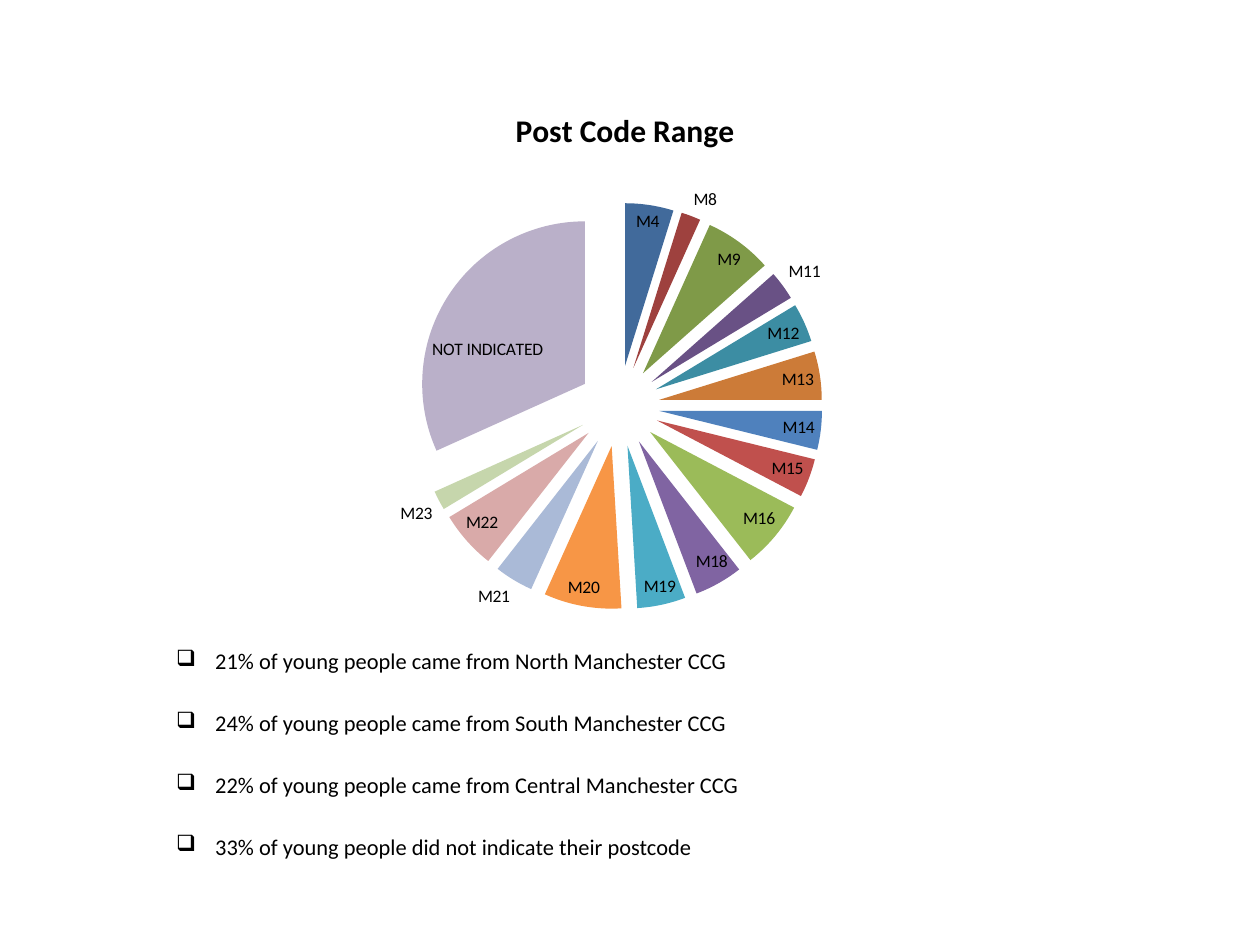
"""Build a slide with a post code pie chart and four findings."""
from lxml.etree import SubElement
from pptx import Presentation
from pptx.chart.data import CategoryChartData
from pptx.dml.color import RGBColor
from pptx.enum.chart import XL_CHART_TYPE, XL_LABEL_POSITION
from pptx.oxml.ns import qn
from pptx.util import Inches, Pt

BLACK = RGBColor(0x00, 0x00, 0x00)
DARK_BLUE = RGBColor(0x41, 0x6A, 0x9B)
DARK_RED = RGBColor(0x9E, 0x41, 0x3E)
DARK_GREEN = RGBColor(0x7F, 0x9A, 0x48)
DARK_PURPLE = RGBColor(0x69, 0x51, 0x85)
DARK_TEAL = RGBColor(0x3C, 0x8D, 0xA3)
DARK_ORANGE = RGBColor(0xCC, 0x7B, 0x38)
BLUE = RGBColor(0x4F, 0x81, 0xBD)
RED = RGBColor(0xC0, 0x50, 0x4D)
GREEN = RGBColor(0x9B, 0xBB, 0x59)
PURPLE = RGBColor(0x80, 0x64, 0xA2)
TEAL = RGBColor(0x4B, 0xAC, 0xC6)
ORANGE = RGBColor(0xF7, 0x96, 0x46)
LIGHT_BLUE = RGBColor(0xAA, 0xBA, 0xD7)
LIGHT_RED = RGBColor(0xD9, 0xAA, 0xA9)
LIGHT_GREEN = RGBColor(0xC6, 0xD6, 0xAC)
LIGHT_PURPLE = RGBColor(0xBA, 0xB0, 0xC9)

FONT = "Calibri"
TITLE = "Post Code Range"
POST_CODES = [
    ("M4", 5, DARK_BLUE), ("M8", 2, DARK_RED), ("M9", 7, DARK_GREEN),
    ("M11", 3, DARK_PURPLE), ("M12", 4, DARK_TEAL), ("M13", 5, DARK_ORANGE),
    ("M14", 4, BLUE), ("M15", 4, RED), ("M16", 7, GREEN),
    ("M18", 5, PURPLE), ("M19", 5, TEAL), ("M20", 8, ORANGE),
    ("M21", 4, LIGHT_BLUE), ("M22", 6, LIGHT_RED), ("M23", 2, LIGHT_GREEN),
    ("NOT INDICATED", 33, LIGHT_PURPLE),
]
FINDINGS = [
    "21% of young people came from North Manchester CCG",
    "24% of young people came from South Manchester CCG",
    "22% of young people came from Central Manchester CCG",
    "33% of young people did not indicate their postcode",
]


def write(para, text, size, bold=False, bullet=None, indent=0.31, gap=0):
    """Put formatted text in a paragraph, with an optional hanging bullet."""
    span = para.add_run()
    span.text = text
    span.font.name, span.font.size, span.font.bold = FONT, Pt(size), bold
    span.font.color.rgb = BLACK
    if gap:
        para.space_after = Pt(gap)
    if bullet:
        properties = para._p.get_or_add_pPr()
        properties.set("marL", str(Inches(indent)))
        properties.set("indent", str(-Inches(indent)))
        SubElement(properties, qn("a:buChar")).set("char", bullet)


def add_pie(slide):
    """Add the exploded pie of post codes."""
    data = CategoryChartData()
    data.categories = [name for name, _, _ in POST_CODES]
    data.add_series("Series 1", [value for _, value, _ in POST_CODES])
    chart = slide.shapes.add_chart(
        XL_CHART_TYPE.PIE, Inches(1.96), Inches(0.67), Inches(6), Inches(4.5), data
    ).chart
    chart.font.name, chart.font.size = FONT, Pt(10)
    chart.font.color.rgb = BLACK
    chart.has_legend = False
    chart.has_title = True
    write(chart.chart_title.text_frame.paragraphs[0], TITLE, 18, bold=True)

    plot = chart.plots[0]
    plot.vary_by_categories = True
    series = plot.series[0]
    for index, (_, _, color) in enumerate(POST_CODES):
        fill = series.points[index].format.fill
        fill.solid()
        fill.fore_color.rgb = color
    labels = series.data_labels
    labels.show_category_name = True
    labels.show_value = False
    labels.show_percentage = False
    labels.position = XL_LABEL_POSITION.BEST_FIT
    explosion = SubElement(series._element, qn("c:explosion"))
    explosion.set("val", "25")
    series._element.find(qn("c:tx")).addnext(explosion)


def add_findings(slide):
    """Add the bulleted findings below the pie."""
    box = slide.shapes.add_textbox(Inches(1.3), Inches(5.09), Inches(7.32), Inches(1.66))
    frame = box.text_frame
    frame.word_wrap = True
    for index, finding in enumerate(FINDINGS):
        para = frame.add_paragraph() if index else frame.paragraphs[0]
        write(para, finding, 12.8, bullet="❑", gap=20)


def main():
    """Create the deck and save it."""
    deck = Presentation()
    deck.slide_width, deck.slide_height = Inches(10), Inches(7.5)
    slide = deck.slides.add_slide(deck.slide_layouts[6])
    add_findings(slide)
    add_pie(slide)
    deck.save("out.pptx")


if __name__ == "__main__":
    main()
